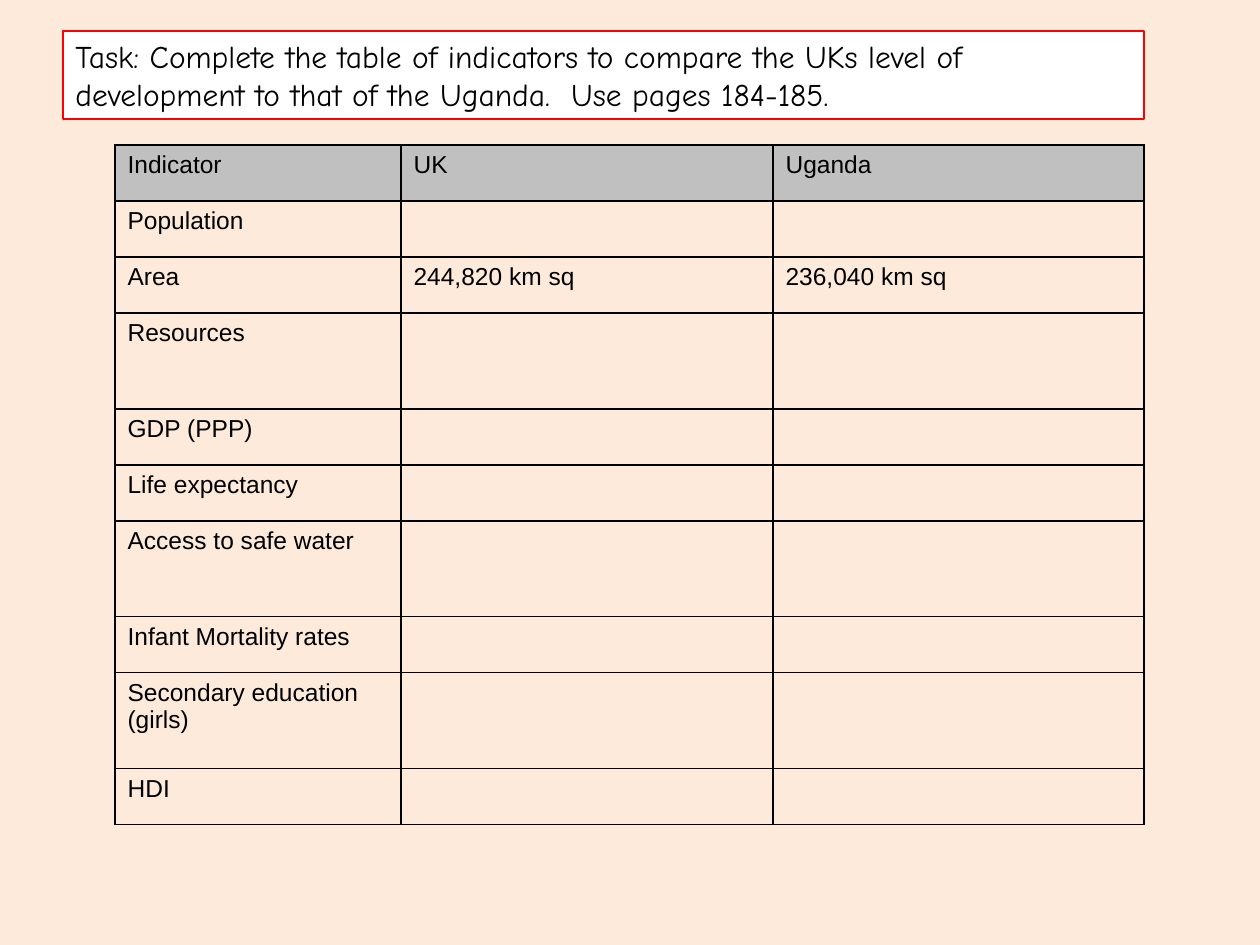
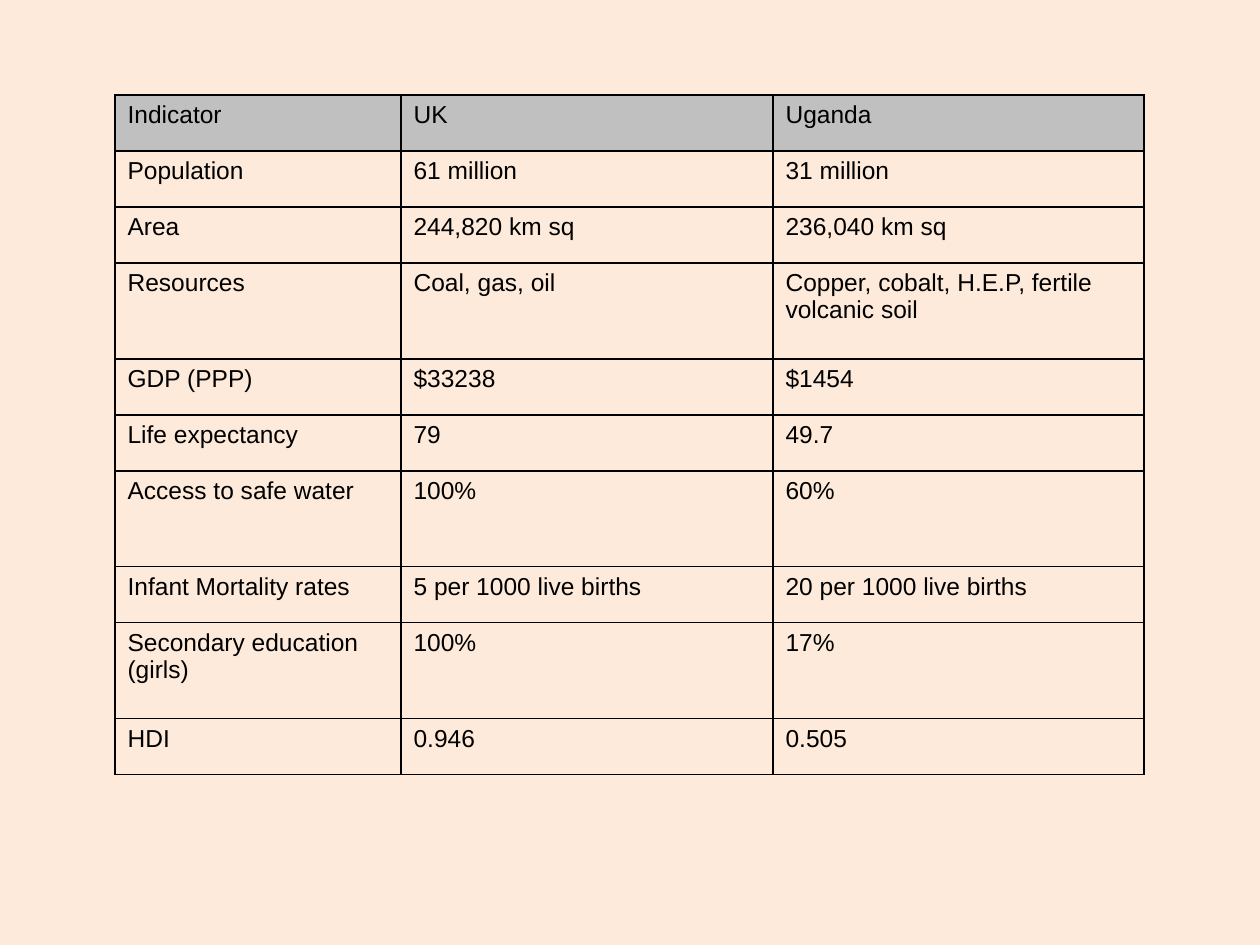
from lxml.etree import SubElement
from pptx import Presentation
from pptx.dml.color import RGBColor
from pptx.enum.shapes import MSO_SHAPE as Shape
from pptx.enum.text import MSO_ANCHOR as Anchor, PP_ALIGN as Align
from pptx.oxml.ns import qn
from pptx.util import Emu, Pt

PEACH = RGBColor(0xFD, 0xEA, 0xDA)
WHITE = RGBColor(0xFF, 0xFF, 0xFF)
BLACK = RGBColor(0x00, 0x00, 0x00)
RED = RGBColor(0xFF, 0x00, 0x00)
SILVER = RGBColor(0xC0, 0xC0, 0xC0)

SLIDE_SIZE = (1260, 945)
TASK_BOX = (63, 31, 1081, 88)
TABLE_LEFT = 115
COLUMN_WIDTHS = (286, 372, 371)
ROW, TALL_ROW = 56, 96
TALL_INDICATORS = {"Resources", "Access to safe water", "Secondary education (girls)"}

TASK = ("Task: Complete the table of indicators to compare the UKs level of "
        "development to that of the Uganda.  Use pages 184-185.")
HEADER = ("Indicator", "UK", "Uganda")
ANSWERS = [
    ("Population", "61 million", "31 million"),
    ("Area", "244,820 km sq", "236,040 km sq"),
    ("Resources", "Coal, gas, oil", "Copper, cobalt, H.E.P, fertile volcanic soil"),
    ("GDP (PPP)", "$33238", "$1454"),
    ("Life expectancy", "79", "49.7"),
    ("Access to safe water", "100%", "60%"),
    ("Infant Mortality rates", "5 per 1000 live births", "20 per 1000 live births"),
    ("Secondary education (girls)", "100%", "17%"),
    ("HDI", "0.946", "0.505"),
]
# The pupils' version gives only the areas
QUESTIONS = [row if row[0] == "Area" else (row[0], "", "") for row in ANSWERS]


def px(length):
    return Emu(round(length * 914400 / 126))


def format_text(frame, font_name, size):
    for paragraph in frame.paragraphs:
        paragraph.alignment = Align.LEFT
        for run in paragraph.runs:
            run.font.name = font_name
            run.font.size = Pt(size)
            run.font.color.rgb = BLACK


def add_borders(cell):
    properties = cell._tc.get_or_add_tcPr()
    for position, side in enumerate(("lnL", "lnR", "lnT", "lnB")):
        border = SubElement(properties, qn(f"a:{side}"), w=str(Pt(1)))
        fill = SubElement(border, qn("a:solidFill"))
        SubElement(fill, qn("a:srgbClr"), val=str(BLACK))
        properties.insert(position, border)


def new_slide(deck):
    slide = deck.slides.add_slide(deck.slide_layouts[6])
    slide.background.fill.solid()
    slide.background.fill.fore_color.rgb = PEACH
    return slide


def add_task(slide, box):
    task = slide.shapes.add_shape(Shape.RECTANGLE, *map(px, box))
    task.shadow.inherit = False
    task.fill.solid()
    task.fill.fore_color.rgb = WHITE
    task.line.color.rgb = RED
    task.line.width = Pt(0.75)
    frame = task.text_frame
    frame.word_wrap = True
    frame.vertical_anchor = Anchor.TOP
    frame.text = TASK
    format_text(frame, "Comic Neue", 18)


def add_indicators(slide, left, top, indicators):
    rows = [HEADER, *indicators]
    heights = [TALL_ROW if row[0] in TALL_INDICATORS else ROW for row in rows]
    box = (left, top, sum(COLUMN_WIDTHS), sum(heights))
    table = slide.shapes.add_table(len(rows), len(HEADER), *map(px, box)).table
    table.first_row = table.horz_banding = False
    for column, width in zip(table.columns, COLUMN_WIDTHS):
        column.width = px(width)
    for r, (values, height) in enumerate(zip(rows, heights)):
        table.rows[r].height = px(height)
        for c, value in enumerate(values):
            cell = table.cell(r, c)
            cell.text_frame.text = value
            format_text(cell.text_frame, "Arial", 14)
            if r == 0:
                cell.fill.solid()
                cell.fill.fore_color.rgb = SILVER
            else:
                cell.fill.background()
            add_borders(cell)


def build_task_slide(deck):
    slide = new_slide(deck)
    add_task(slide, TASK_BOX)
    add_indicators(slide, TABLE_LEFT, 145, QUESTIONS)


def build_answer_slide(deck):
    add_indicators(new_slide(deck), TABLE_LEFT, 95, ANSWERS)


def main():
    deck = Presentation()
    deck.slide_width, deck.slide_height = map(px, SLIDE_SIZE)
    build_task_slide(deck)
    build_answer_slide(deck)
    deck.save("out.pptx")


if __name__ == "__main__":
    main()
